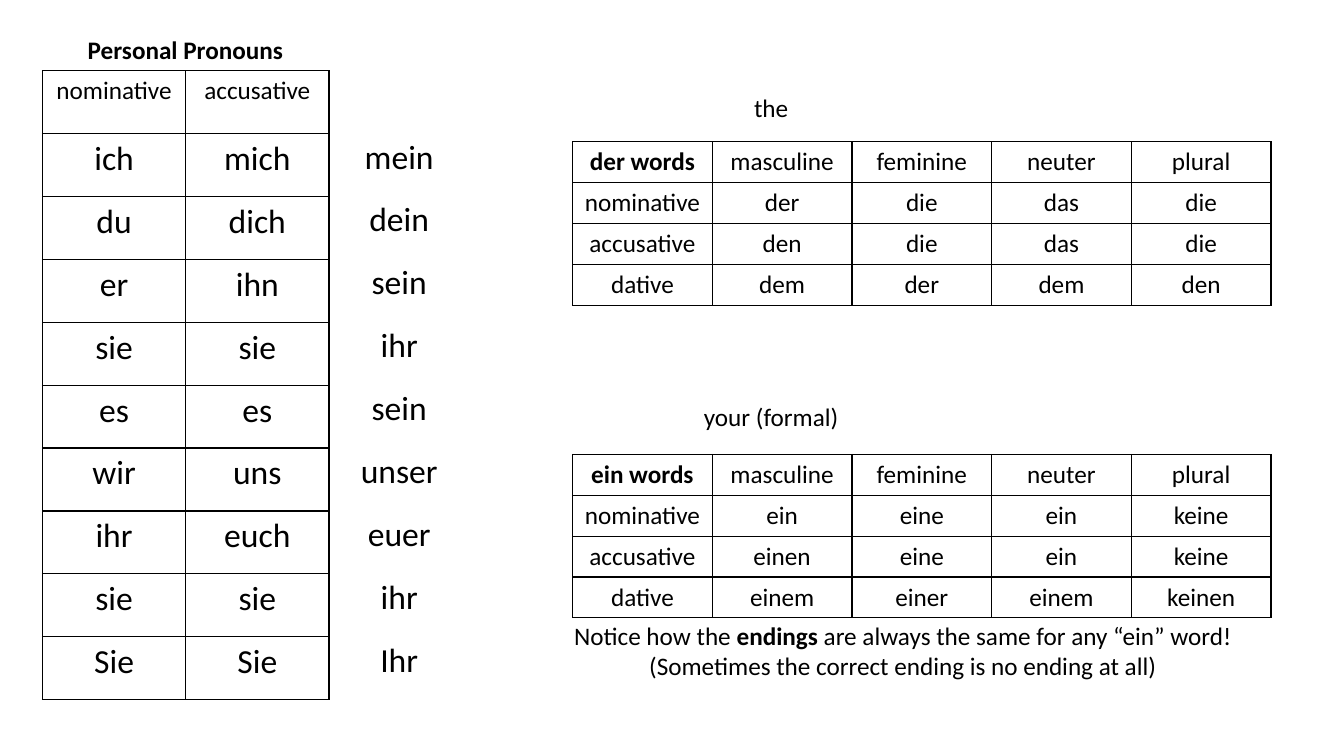
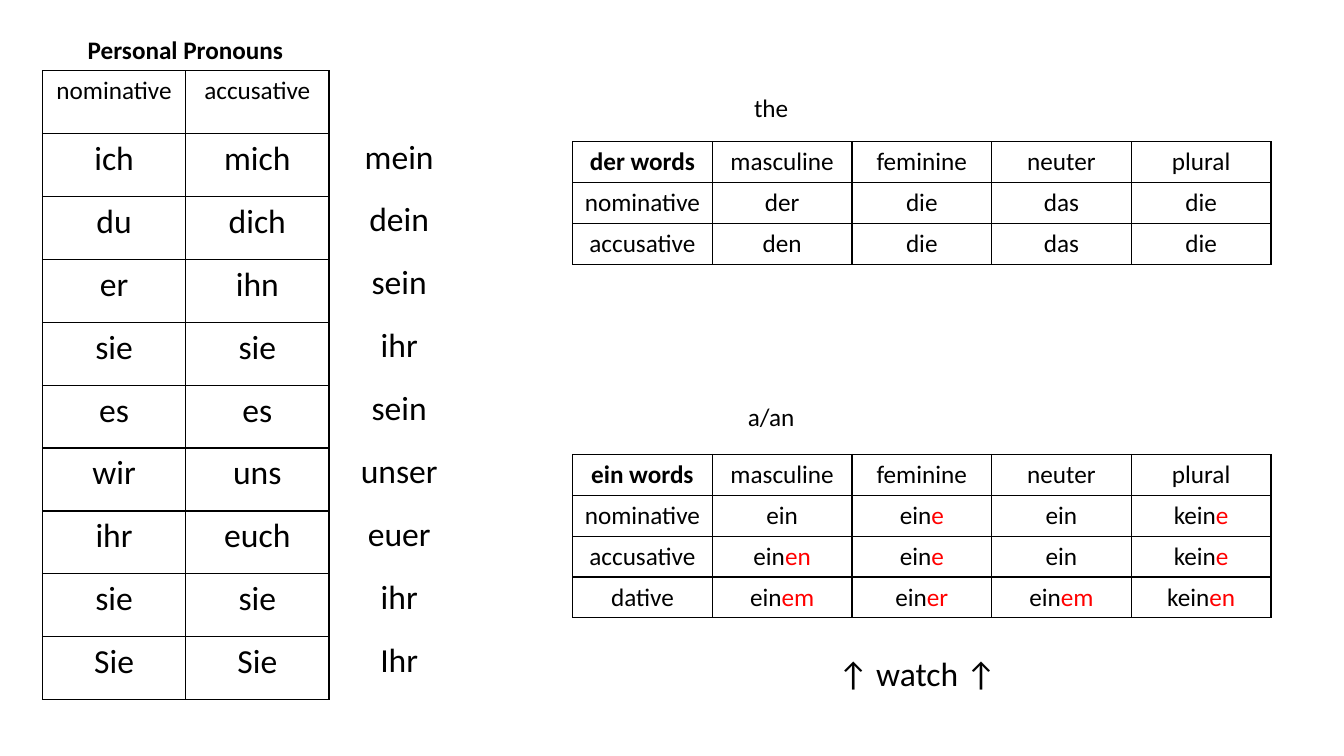
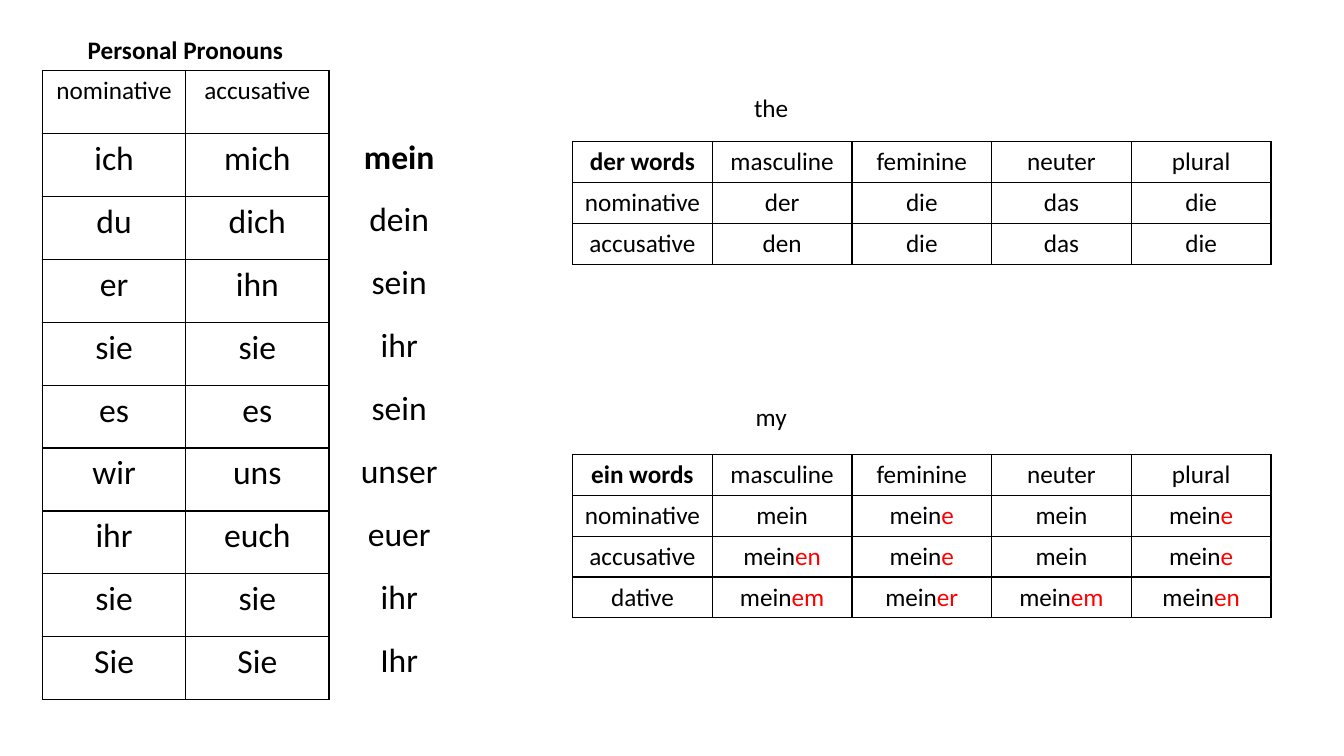
import pptx
import pptx.dml.color
import pptx.enum.text
import pptx.oxml
import pptx.oxml.ns
import pptx.util

Cm, Pt = pptx.util.Cm, pptx.util.Pt

FONT = "Calibri"
BLACK, RED = "000000", "FF0000"
BODY, LARGE = 18, 24
BORDER_PT = 1
PLAIN_TABLE_STYLE = "{2D5ABB26-0587-4C30-8999-92F81FD0307C}"

# A text is a list of runs: (words, bold, colour).
PRONOUNS = [
    ("nominative", "accusative"),
    ("ich", "mich"),
    ("du", "dich"),
    ("er", "ihn"),
    ("sie", "sie"),
    ("es", "es"),
    ("wir", "uns"),
    ("ihr", "euch"),
    ("sie", "sie"),
    ("Sie", "Sie"),
]
POSSESSIVES = ["mein", "dein", "sein", "ihr", "sein", "unser", "euer", "ihr", "Ihr"]
GENDERS = ["masculine", "feminine", "neuter", "plural"]
DER_WORDS = {
    "nominative": ["der", "die", "das", "die"],
    "accusative": ["den", "die", "das", "die"],
    "dative": ["dem", "der", "dem", "den"],
}
EIN_ENDINGS = {
    "nominative": ["", "e", "", "e"],
    "accusative": ["en", "e", "", "e"],
    "dative": ["em", "er", "em", "en"],
}
ENDINGS_NOTE = [
    ("Notice how the ", False, BLACK),
    ("endings", True, BLACK),
    (" are always the same for any “ein” word! "
     "(Sometimes the correct ending is no ending at all)", False, BLACK),
]
WATCH_NOTE = [("↑ watch ↑", False, BLACK)]

# note: runs, size, box (left, top, width, height in cm)
SLIDES = [
    {"meaning": "your (formal)", "stem": "ein", "plural_stem": "kein",
     "ending_colour": BLACK, "der_cases": 3, "bold_possessive": None,
     "note": (ENDINGS_NOTE, BODY, (14.07, 15.5, 17.37, 1.8))},
    {"meaning": "a/an", "stem": "ein", "plural_stem": "kein",
     "ending_colour": RED, "der_cases": 2, "bold_possessive": None,
     "note": (WATCH_NOTE, LARGE, (14.43, 16.33, 17.37, 1.28))},
    {"meaning": "my", "stem": "mein", "plural_stem": "mein",
     "ending_colour": RED, "der_cases": 2, "bold_possessive": "mein",
     "note": None},
]

# Layout in cm
PRONOUN_LEFT, PRONOUN_TOP, PRONOUN_COL = 1.07, 1.78, 3.61
PRONOUN_ROW = 15.85 / len(PRONOUNS)
POSSESSIVE_LEFT, POSSESSIVE_TOP, POSSESSIVE_COL = 8.46, 3.33, 3.2
CASE_LEFT, CASE_COL, CASE_ROW = 14.43, 3.52, 1.03
DER_TOP, EIN_TOP = 3.57, 11.45
LABEL_WIDTH, LABEL_HEIGHT = 7.01, 1.03
TITLE_AT, DER_LABEL_AT, EIN_LABEL_AT = (1.17, 0.74), (15.93, 2.21), (15.93, 9.98)


def rgb(colour):
    return pptx.dml.color.RGBColor.from_string(colour)


def plain(words, bold=False):
    return [(words, bold, BLACK)]


def write(tf, runs, size):
    p = tf.paragraphs[0]
    p.alignment = pptx.enum.text.PP_ALIGN.CENTER
    for words, bold, colour in runs:
        r = p.add_run()
        r.text = words
        for name, value in {"name": FONT, "size": Pt(size), "bold": bold}.items():
            setattr(r.font, name, value)
        r.font.color.rgb = rgb(colour)


def add_text(slide, runs, size, box):
    tf = slide.shapes.add_textbox(*map(Cm, box)).text_frame
    tf.word_wrap = True
    tf.auto_size = pptx.enum.text.MSO_AUTO_SIZE.SHAPE_TO_FIT_TEXT
    write(tf, runs, size)


def add_label(slide, words, at, bold=False):
    add_text(slide, plain(words, bold), BODY, (*at, LABEL_WIDTH, LABEL_HEIGHT))


def add_borders(cell):
    tc_pr = cell._tc.get_or_add_tcPr()
    for side in ("lnL", "lnR", "lnT", "lnB"):
        tc_pr.append(pptx.oxml.parse_xml(
            f'<a:{side} {pptx.oxml.ns.nsdecls("a")} w="{Pt(BORDER_PT)}">'
            f'<a:solidFill><a:srgbClr val="{BLACK}"/></a:solidFill></a:{side}>'))


def add_grid(slide, rows, at, col, row, size, header_size=None, borders=True):
    """Add a table of equal cells; each cell is a list of runs."""
    n_rows, n_cols = len(rows), len(rows[0])
    table = slide.shapes.add_table(
        n_rows, n_cols, *map(Cm, at), Cm(col * n_cols), Cm(row * n_rows)).table
    table.first_row = table.horz_banding = False
    table._tbl.tblPr[0].text = PLAIN_TABLE_STYLE
    for i, cells in enumerate(rows):
        for j, runs in enumerate(cells):
            cell = table.cell(i, j)
            if borders:
                add_borders(cell)
            cell.fill.background()
            write(cell.text_frame, runs, header_size if header_size and i == 0 else size)


def add_case_grid(slide, title, cases, top):
    header = [plain(title, True)] + [plain(gender) for gender in GENDERS]
    rows = [header] + [[plain(case)] + cells for case, cells in cases]
    add_grid(slide, rows, (CASE_LEFT, top), CASE_COL, CASE_ROW, BODY)


def ein_cases(stem, plural_stem, colour):
    """Join stems and endings, with the endings in their own colour."""
    stems = [stem] * 3 + [plural_stem]
    return [
        (case, [plain(s) + ([(ending, False, colour)] if ending else [])
                for s, ending in zip(stems, endings)])
        for case, endings in EIN_ENDINGS.items()
    ]


def build_slide(prs, content):
    slide = prs.slides.add_slide(prs.slide_layouts[6])
    add_label(slide, "Personal Pronouns", TITLE_AT, bold=True)
    add_grid(slide, [[plain(word) for word in row] for row in PRONOUNS],
             (PRONOUN_LEFT, PRONOUN_TOP), PRONOUN_COL, PRONOUN_ROW, LARGE, header_size=BODY)
    add_grid(slide, [[plain(word, word == content["bold_possessive"])] for word in POSSESSIVES],
             (POSSESSIVE_LEFT, POSSESSIVE_TOP), POSSESSIVE_COL, PRONOUN_ROW, LARGE,
             borders=False)

    add_label(slide, "the", DER_LABEL_AT)
    der_cases = [(case, [plain(word) for word in words]) for case, words in DER_WORDS.items()]
    add_case_grid(slide, "der words", der_cases[:content["der_cases"]], DER_TOP)

    add_label(slide, content["meaning"], EIN_LABEL_AT)
    add_case_grid(slide, "ein words",
                  ein_cases(content["stem"], content["plural_stem"], content["ending_colour"]),
                  EIN_TOP)
    if content["note"]:
        add_text(slide, *content["note"])


def main():
    prs = pptx.Presentation()
    prs.slide_width, prs.slide_height = Cm(33.87), Cm(19.05)
    for content in SLIDES:
        build_slide(prs, content)
    prs.save("out.pptx")


if __name__ == "__main__":
    main()
